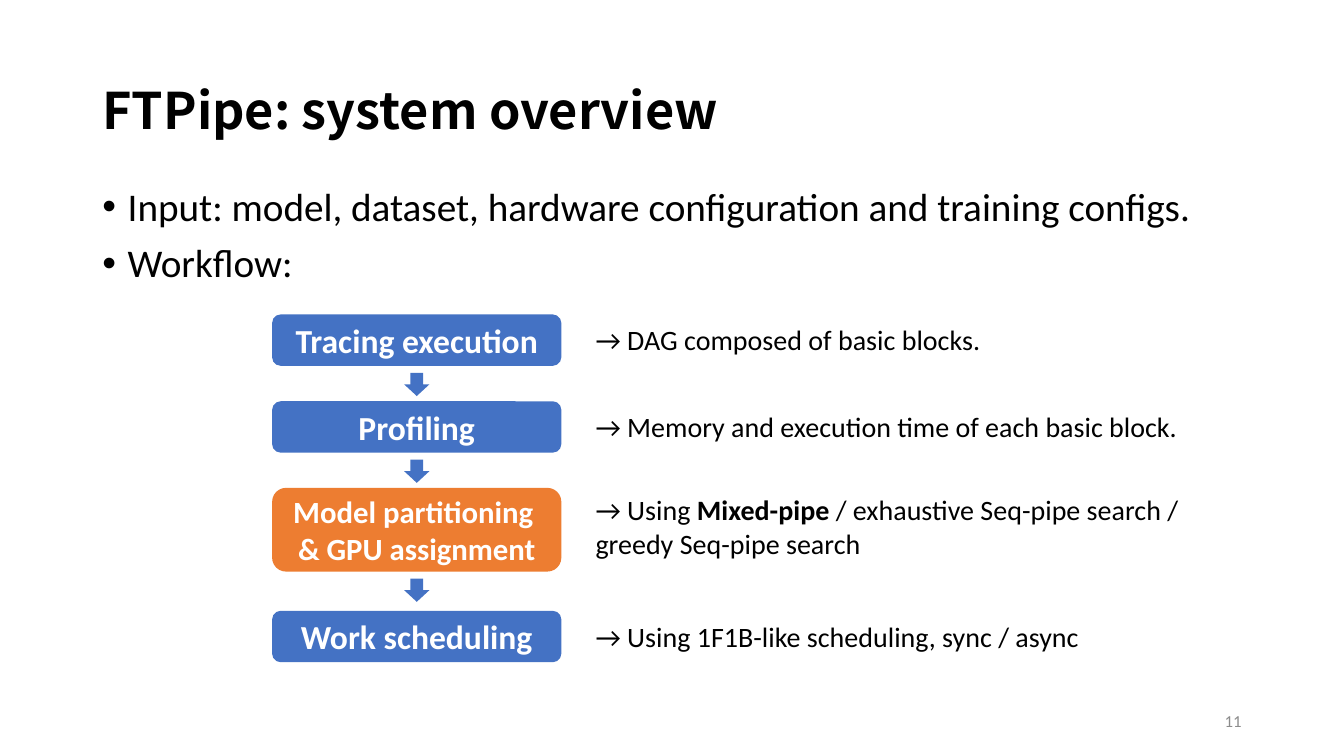
from dataclasses import dataclass

from lxml import etree
from pptx import Presentation
from pptx.dml.color import RGBColor
from pptx.enum import shapes, text
from pptx.oxml import ns
from pptx.util import Pt


@dataclass(frozen=True)
class Theme:
    heading_font: str = "Noto Sans CJK SC"
    body_font: str = "Calibri"
    black: str = "000000"
    white: str = "FFFFFF"
    grey: str = "8C8C8C"
    blue: str = "4472C4"
    orange: str = "ED7D31"
    title_size: int = 36
    bullet_size: int = 28
    step_size: int = 24
    small_step_size: int = 22
    note_size: int = 20
    number_size: int = 12


theme = Theme()


def format_text(shape, size, color, bold=False, font=theme.body_font,
                align=text.PP_ALIGN.LEFT, anchor=text.MSO_ANCHOR.TOP):
    frame = shape.text_frame
    frame.word_wrap = True
    frame.auto_size = text.MSO_AUTO_SIZE.NONE
    frame.vertical_anchor = anchor
    for paragraph in frame.paragraphs:
        paragraph.alignment = align
        for run in paragraph.runs:
            run.font.name = font
            run.font.size = Pt(size)
            run.font.bold = bold
            run.font.color.rgb = RGBColor.from_string(color)


def add_block(kind, left, top, width, height, color):
    shape = slide.shapes.add_shape(kind, Pt(left), Pt(top), Pt(width), Pt(height))
    shape.shadow.inherit = False
    shape.fill.solid()
    shape.fill.fore_color.rgb = RGBColor.from_string(color)
    shape.line.fill.background()
    return shape


presentation = Presentation()
presentation.slide_width, presentation.slide_height = Pt(960), Pt(540)
slide = presentation.slides.add_slide(presentation.slide_layouts[1])

# Title
title = slide.shapes.title
title.left, title.top, title.width, title.height = Pt(66), Pt(28.8), Pt(828), Pt(104.4)
title.text_frame.text = "FTPipe: system overview"
title.text_frame.paragraphs[0].line_spacing = 0.9
format_text(title, theme.title_size, theme.black, True, theme.heading_font,
            anchor=text.MSO_ANCHOR.MIDDLE)

# Bullet list
body = slide.placeholders[1]
body.left, body.top, body.width, body.height = Pt(66), Pt(130.3), Pt(828), Pt(84.2)
body.text_frame.text = (
    "Input: model, dataset, hardware configuration and training configs.\nWorkflow:"
)
format_text(body, theme.bullet_size, theme.black)
for paragraph in body.text_frame.paragraphs:
    paragraph.line_spacing = 0.9
    paragraph.space_before = Pt(10)
    properties = paragraph._p.get_or_add_pPr()
    properties.set("marL", str(Pt(18)))
    properties.set("indent", str(-Pt(18)))
    bullet_font = etree.SubElement(properties, ns.qn("a:buFont"))
    bullet_font.set("typeface", "Arial")
    etree.SubElement(properties, ns.qn("a:buChar")).set("char", "•")

# Slide number
number = slide.shapes.add_textbox(Pt(678), Pt(500.5), Pt(216), Pt(28.8))
number.text_frame.text = "11"
format_text(number, theme.number_size, theme.grey,
            align=text.PP_ALIGN.RIGHT, anchor=text.MSO_ANCHOR.MIDDLE)

# Workflow: label, top, height, fill, label size, note as (words, bold) pieces
steps = [
    ("Tracing execution", 224.6, 36.7, theme.blue, theme.step_size,
     [("→ DAG composed of basic blocks.", False)]),
    ("Profiling", 286.6, 36.7, theme.blue, theme.step_size,
     [("→ Memory and execution time of each basic block.", False)]),
    ("Model partitioning \n& GPU assignment", 348.5, 59.8, theme.orange,
     theme.small_step_size,
     [("→ Using ", False), ("Mixed-pipe", True),
      (" / exhaustive Seq-pipe search / greedy Seq-pipe search", False)]),
    ("Work scheduling", 436.3, 36.7, theme.blue, theme.step_size,
     [("→ Using 1F1B-like scheduling, sync / async", False)]),
]
step_left, step_width = 194.4, 206.6
arrow_width, arrow_height, arrow_gap = 18, 16.6, 5
note_left, note_width, note_height = 418.3, 447.1, 31.7

for index, (label, top, height, color, size, pieces) in enumerate(steps):
    step = add_block(shapes.MSO_SHAPE.ROUNDED_RECTANGLE,
                     step_left, top, step_width, height, color)
    step.text_frame.text = label
    format_text(step, size, theme.white, True, align=text.PP_ALIGN.CENTER,
                anchor=text.MSO_ANCHOR.MIDDLE)

    # Arrow to the next step
    if index < len(steps) - 1:
        add_block(shapes.MSO_SHAPE.DOWN_ARROW,
                  step_left + (step_width - arrow_width) / 2,
                  top + height + arrow_gap, arrow_width, arrow_height, theme.blue)

    # Note beside the step: one line is centred on it, two lines start at its top
    note_top = top if len(pieces) > 1 else top + (height - note_height) / 2
    note = slide.shapes.add_textbox(Pt(note_left), Pt(note_top), Pt(note_width),
                                    Pt(max(note_height, height)))
    paragraph = note.text_frame.paragraphs[0]
    for words, bold in pieces:
        paragraph.add_run().text = words
    format_text(note, theme.note_size, theme.black)
    for run, (words, bold) in zip(paragraph.runs, pieces):
        run.font.bold = bold

presentation.save("out.pptx")
